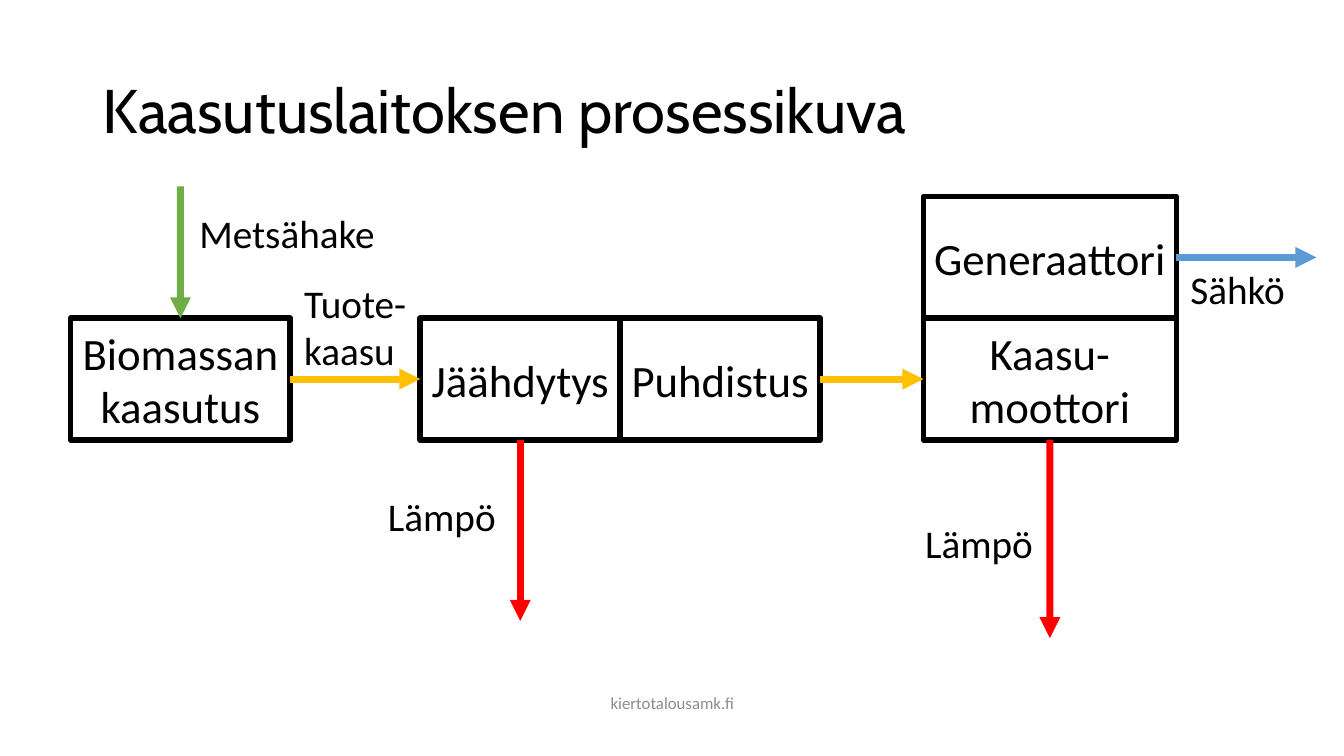
from typing import NamedTuple

from lxml.etree import SubElement
from pptx import Presentation
from pptx.dml.color import RGBColor
from pptx.enum.shapes import MSO_CONNECTOR as Line, MSO_SHAPE as Form
from pptx.enum.text import MSO_ANCHOR as Anchor, MSO_AUTO_SIZE as Fit, PP_ALIGN as Align
from pptx.oxml.ns import qn
from pptx.util import Inches, Pt

WIDE, HIGH = Inches(13.333), Inches(7.5)
TOP, LEFT, BOTTOM, RIGHT = range(4)
BLACK, GREY = "000000", "8C8C8C"
GREEN, GOLD, RED, BLUE = "70AD47", "FFC000", "FF0000", "5B9BD5"

# All lengths below are percent of the slide's width (x, wide) or height (y, high).
ROW = 16.1
UPPER = 26
LOWER = UPPER + ROW
COOL, CELL = 31.27, 14.88


class Box(NamedTuple):
    text: str
    x: float
    y: float
    wide: float
    high: float = ROW


class Flow(NamedTuple):
    """An arrow between two ends, each a point or a (box name, side) pair."""
    start: tuple
    end: tuple
    color: str


BOXES = [
    Box("Generaattori", 68.7, UPPER, 18.83),
    Box("Jäähdytys", COOL, LOWER, CELL),
    Box("Kaasu-moottori", 68.7, LOWER, 18.83),
    Box("Puhdistus", COOL + CELL, LOWER, CELL),
    Box("Biomassan kaasutus", 5.25, LOWER, 16.35),
]
FLOWS = [
    Flow((13.42, 24.67), ("Biomassan kaasutus", TOP), GREEN),
    Flow(("Biomassan kaasutus", RIGHT), ("Jäähdytys", LEFT), GOLD),
    Flow(("Puhdistus", RIGHT), ("Kaasu-moottori", LEFT), GOLD),
    Flow(("Jäähdytys", BOTTOM), (38.71, 82.13), RED),
    Flow(("Kaasu-moottori", BOTTOM), (78.12, 84.4), RED),
    Flow(("Generaattori", RIGHT), (97.95, UPPER + ROW / 2), BLUE),
]
LABELS = [
    Box("Metsähake", 14.1, 27.07, 20.55, 7.6),
    Box("Tuote-kaasu", 21.9, 36.27, 12.45, 13.87),
    Box("Lämpö", 28.13, 64.53, 12.38, 7.6),
    Box("Lämpö", 68.1, 68, 20.03, 7.6),
    Box("Sähkö", 87.83, 34.4, 12.1, 7.6),
]
TITLE = Box("Kaasutuslaitoksen prosessikuva", 6.9, 5.33, 86.25, 19.33)
FOOT = Box("kiertotalousamk.fi", 33.15, 90.27, 33.75, 5.33)


def tint(color) -> RGBColor:
    return RGBColor.from_string(color)


def place(x: float, y: float) -> tuple:
    return round(WIDE * x / 100), round(HIGH * y / 100)


def frame(box: Box) -> tuple:
    return *place(box.x, box.y), *place(box.wide, box.high)


def apply(target, looks: dict) -> None:
    for name, value in looks.items():
        setattr(target, name, value)


def write(shape, text: str, size: float, face: str = "Calibri", color: str = BLACK,
          align=Align.LEFT, anchor=Anchor.MIDDLE, fit=Fit.NONE) -> None:
    body = shape.text_frame
    body.text = text
    apply(body, {"word_wrap": True, "vertical_anchor": anchor, "auto_size": fit})
    para = body.paragraphs[0]
    para.alignment = align
    font = para.runs[0].font
    apply(font, {"size": Pt(size), "name": face})
    font.color.rgb = tint(color)


def draw_box(slide, box: Box):
    shape = slide.shapes.add_shape(Form.RECTANGLE, *frame(box))
    shape.shadow.inherit = False
    shape.fill.background()
    shape.line.color.rgb = tint(BLACK)
    shape.line.width = Pt(4)
    write(shape, box.text, 32, align=Align.CENTER)
    return shape


def draw_flow(slide, flow: Flow, shapes: dict) -> None:
    fixed = [place(*end) if end[0] not in shapes else (0, 0) for end in (flow.start, flow.end)]
    arrow = slide.shapes.add_connector(Line.STRAIGHT, *fixed[0], *fixed[1])
    for end, join in ((flow.start, arrow.begin_connect), (flow.end, arrow.end_connect)):
        if end[0] in shapes:
            join(shapes[end[0]], end[1])
    arrow.line.color.rgb = tint(flow.color)
    arrow.line.width = Pt(5)
    SubElement(arrow.line._get_or_add_ln(), qn("a:tailEnd"), type="triangle")
    SubElement(arrow._element.spPr, qn("a:effectLst"))


def main() -> None:
    deck = Presentation()
    apply(deck, {"slide_width": WIDE, "slide_height": HIGH})
    slide = deck.slides.add_slide(deck.slide_layouts[5])

    title = slide.shapes.title
    apply(title, dict(zip(("left", "top", "width", "height"), frame(TITLE))))
    write(title, TITLE.text, 44, "Cabin")
    title.text_frame.paragraphs[0].line_spacing = 0.9

    foot = slide.shapes.add_textbox(*frame(FOOT))
    write(foot, FOOT.text, 12, color=GREY, align=Align.CENTER)

    shapes = {box.text: draw_box(slide, box) for box in BOXES}
    for flow in FLOWS:
        draw_flow(slide, flow, shapes)
    for label in LABELS:
        write(slide.shapes.add_textbox(*frame(label)), label.text, 28,
              anchor=Anchor.TOP, fit=Fit.SHAPE_TO_FIT_TEXT)
    deck.save("out.pptx")


if __name__ == "__main__":
    main()
